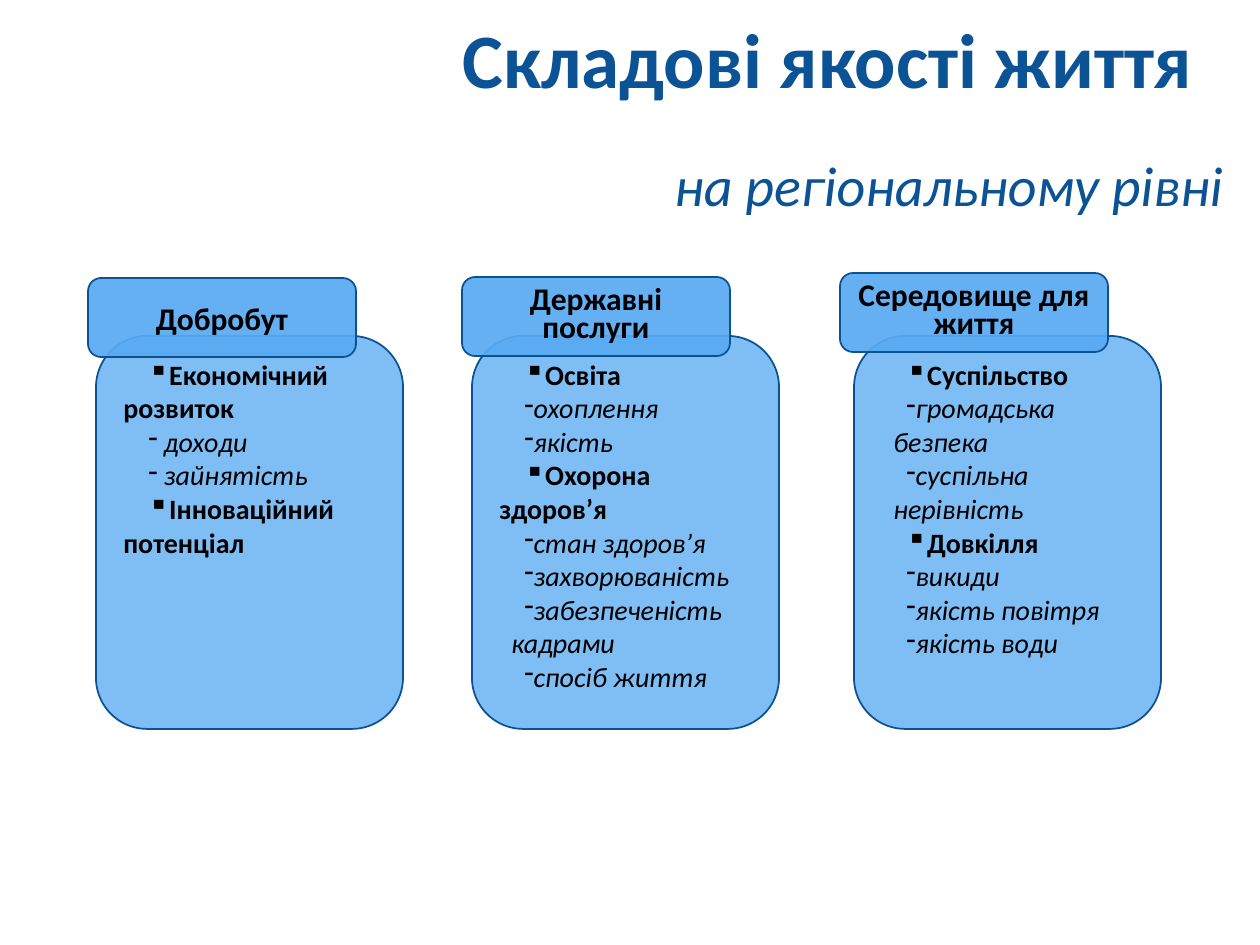
import dataclasses

import lxml.etree
import pptx
import pptx.dml.color
import pptx.enum.shapes
import pptx.enum.text
import pptx.oxml.ns
import pptx.util

PX = 914400 / 126  # EMU in one px
ALIGN = pptx.enum.text.PP_ALIGN
ANCHOR = pptx.enum.text.MSO_ANCHOR
qn = pptx.oxml.ns.qn


@dataclasses.dataclass(frozen=True)
class Theme:
    font: str = "Calibri"
    title: str = "0B5395"
    subtitle: str = "0B5394"
    text: str = "000000"
    fill: str = "59AAF2"
    line: str = "0B5292"
    body_alpha: int = 77
    header_alpha: int = 93
    title_size: int = 44
    subtitle_size: int = 32
    header_size: int = 18
    body_size: int = 16


THEME = Theme()

# Each column: body left, header offset from the body, header spacing, heading, list.
# A list entry is (topic, details).
COLUMNS = [
    (96, (-8, -58), None, "Добробут", [
        ("Економічний розвиток", [" доходи", " зайнятість"]),
        ("Інноваційний потенціал", []),
    ]),
    (472, (-10, -59), 16, "Державні послуги", [
        ("Освіта", ["охоплення", "якість"]),
        ("Охорона здоров’я", ["стан здоров’я", "захворюваність",
                              "забезпеченість кадрами", "спосіб життя"]),
    ]),
    (854, (-14, -63), 16, "Середовище для життя", [
        ("Суспільство", ["громадська безпека", "суспільна нерівність"]),
        ("Довкілля", ["викиди", "якість повітря", "якість води"]),
    ]),
]


def px(n):
    return round(n * PX)


def rgb(color):
    return pptx.dml.color.RGBColor.from_string(color)


def write(p, text, size, color=THEME.text, bold=False, italic=False,
          align=ALIGN.LEFT, spacing=None, bullet=None, margin=0, indent=0):
    """Put text in a paragraph and format it."""
    p.alignment = align
    if spacing:
        p.line_spacing = pptx.util.Pt(spacing)
    if bullet:
        ppr = p._p.get_or_add_pPr()
        ppr.set("marL", str(px(margin)))
        ppr.set("indent", str(px(indent)))
        lxml.etree.SubElement(ppr, qn("a:buChar")).set("char", bullet)
    r = p.add_run()
    r.text = text
    r.font.name = THEME.font
    r.font.size = pptx.util.Pt(size)
    r.font.color.rgb = rgb(color)
    r.font.bold = bold
    r.font.italic = italic


def place(sp, x, y, w, h):
    sp.left, sp.top, sp.width, sp.height = px(x), px(y), px(w), px(h)


def add_panel(s, x, y, w, h, alpha, anchor):
    """Translucent rounded panel; returns its text frame."""
    sp = s.shapes.add_shape(pptx.enum.shapes.MSO_SHAPE.ROUNDED_RECTANGLE,
                            px(x), px(y), px(w), px(h))
    sp.shadow.inherit = False
    sp.fill.solid()
    sp.fill.fore_color.rgb = rgb(THEME.fill)
    color = sp._element.spPr.find(qn("a:solidFill"))[0]
    lxml.etree.SubElement(color, qn("a:alpha")).set("val", str(alpha * 1000))
    sp.line.color.rgb = rgb(THEME.line)
    sp.line.width = pptx.util.Pt(1)
    tf = sp.text_frame
    tf.word_wrap = True
    tf.vertical_anchor = anchor
    return tf


def add_heading(s, x, y, w, h):
    """Title, with the subtitle below and slightly to the right."""
    title = s.shapes.title
    place(title, x, y, w, h)
    title.text_frame.vertical_anchor = ANCHOR.MIDDLE
    write(title.text_frame.paragraphs[0], "Складові якості життя", THEME.title_size,
          color=THEME.title, bold=True, align=ALIGN.RIGHT)

    subtitle = s.shapes.add_textbox(px(x + 30), px(y + 145), px(w), px(79))
    tf = subtitle.text_frame
    tf.word_wrap = True
    tf.vertical_anchor = ANCHOR.MIDDLE
    write(tf.paragraphs[0], "на регіональному рівні", THEME.subtitle_size,
          color=THEME.subtitle, italic=True, align=ALIGN.RIGHT)


def add_column(s, x, y, w, h, offset, spacing, heading, topics):
    """List panel with a header panel over its top edge."""
    tf = add_panel(s, x, y, w, h, THEME.body_alpha, ANCHOR.TOP)
    p = tf.paragraphs[0]
    for i, (topic, details) in enumerate(topics):
        if i:
            p = tf.add_paragraph()
        write(p, topic, THEME.body_size, bold=True, bullet="▪", indent=25)
        for detail in details:
            p = tf.add_paragraph()
            p.level = 1
            write(p, detail, THEME.body_size, italic=True,
                  bullet="-", margin=12, indent=13)

    dx, dy = offset
    tf = add_panel(s, x + dx, y + dy, 268, 79, THEME.header_alpha, ANCHOR.MIDDLE)
    write(tf.paragraphs[0], heading, THEME.header_size, bold=True,
          align=ALIGN.CENTER, spacing=spacing)


def main():
    prs = pptx.Presentation()
    prs.slide_width, prs.slide_height = px(1260), px(945)
    s = prs.slides.add_slide(prs.slide_layouts.get_by_name("Title Only"))
    add_heading(s, 233, 0, 973, 115)
    for x, *content in COLUMNS:
        add_column(s, x, 336, 307, 393, *content)
    prs.save("out.pptx")


if __name__ == "__main__":
    main()
